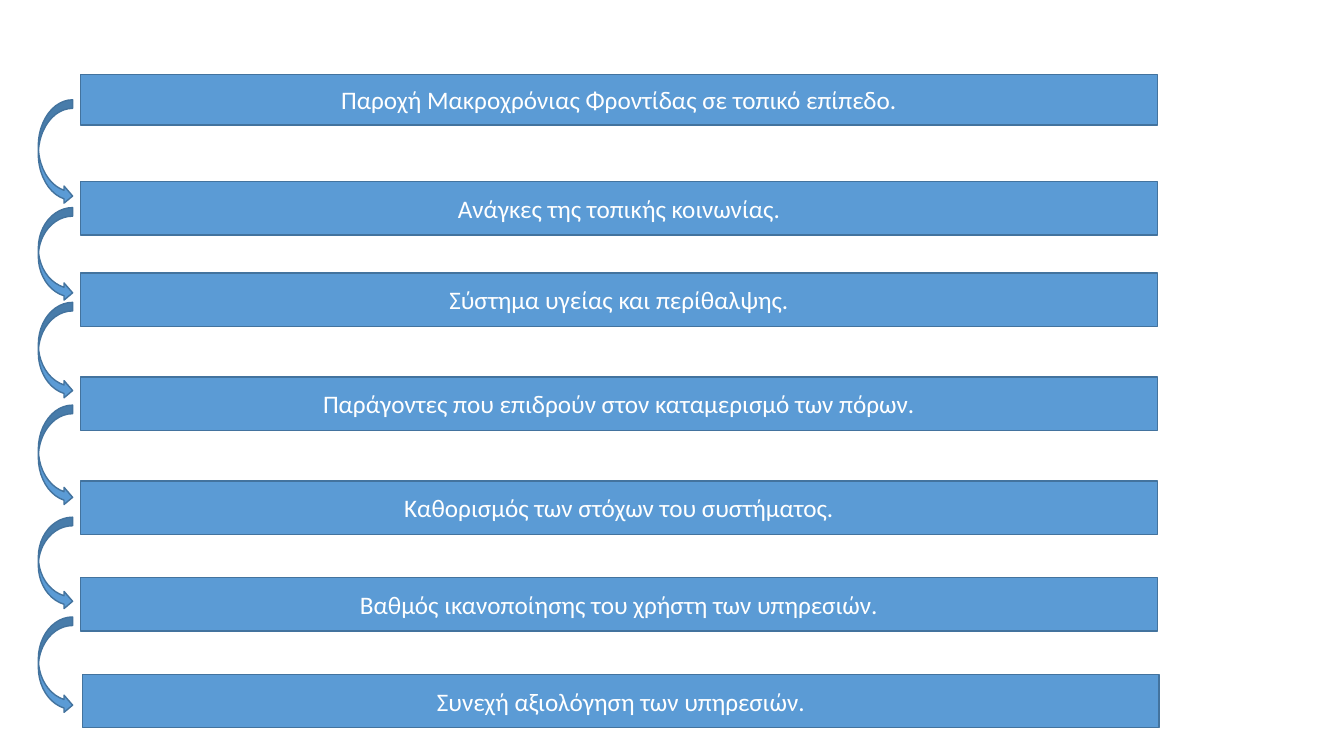
from dataclasses import dataclass

from pptx import Presentation
from pptx.dml.color import RGBColor
from pptx.enum.shapes import MSO_SHAPE
from pptx.enum.text import MSO_ANCHOR, PP_ALIGN
from pptx.util import Pt


@dataclass(frozen=True)
class Theme:
    """Colours and type sizes of the slide."""
    fill: RGBColor = RGBColor(0x5B, 0x9B, 0xD5)
    line: RGBColor = RGBColor(0x43, 0x73, 0x9E)
    text: RGBColor = RGBColor(0xFF, 0xFF, 0xFF)
    font: str = "Calibri"
    size: int = 18
    line_width: int = 1


THEME = Theme()

STEPS = [
    ("Παροχή Μακροχρόνιας Φροντίδας σε τοπικό επίπεδο.", 0, 0, 36),
    ("Ανάγκες της τοπικής κοινωνίας.", 0, 76.3, 38.2),
    ("Σύστημα υγείας και περίθαλψης.", 0, 141.8, 38.2),
    ("Παράγοντες που επιδρούν στον καταμερισμό των πόρων.", 0, 216, 38.2),
    ("Καθορισμός των στόχων του συστήματος.", 0, 290.2, 38.2),
    ("Βαθμός ικανοποίησης του χρήστη των υπηρεσιών.", 0, 359.3, 38.2),
    ("Συνεχή αξιολόγηση των υπηρεσιών.", 1.4, 428.4, 38.2),
]

ARROWS = [(0, 74.9), (77, 67), (144.7, 69.1), (218.1, 72), (298.1, 66.2), (369.4, 69.1)]


def add_block(page, kind, left, top, width, height):
    """Add a filled and outlined preset shape without shadow."""
    block = page.shapes.add_shape(kind, Pt(left), Pt(top), Pt(width), Pt(height))
    block.shadow.inherit = False
    block.fill.solid()
    block.fill.fore_color.rgb = THEME.fill
    block.line.color.rgb = THEME.line
    block.line.width = Pt(THEME.line_width)
    return block


def add_steps(page, left, top, width):
    """Stack the labelled steps in a column."""
    for label, shift, offset, height in STEPS:
        bar = add_block(page, MSO_SHAPE.RECTANGLE, left + shift, top + offset, width, height)
        frame = bar.text_frame
        frame.word_wrap = True
        frame.vertical_anchor = MSO_ANCHOR.MIDDLE
        para = frame.paragraphs[0]
        para.text = label
        para.alignment = PP_ALIGN.CENTER
        para.font.name = THEME.font
        para.font.size = Pt(THEME.size)
        para.font.color.rgb = THEME.text


def add_arrows(page, left, top, width):
    """Place the curved arrows that lead from each step to the next."""
    for offset, height in ARROWS:
        add_block(page, MSO_SHAPE.CURVED_RIGHT_ARROW, left, top + offset, width, height)


def main():
    """Build the deck and save it."""
    deck = Presentation()
    deck.slide_width, deck.slide_height = Pt(960), Pt(540)
    page = deck.slides.add_slide(deck.slide_layouts[6])
    add_steps(page, left=57.6, top=53.3, width=769)
    add_arrows(page, left=27.4, top=71.3, width=24.5)
    deck.save("out.pptx")


if __name__ == "__main__":
    main()
